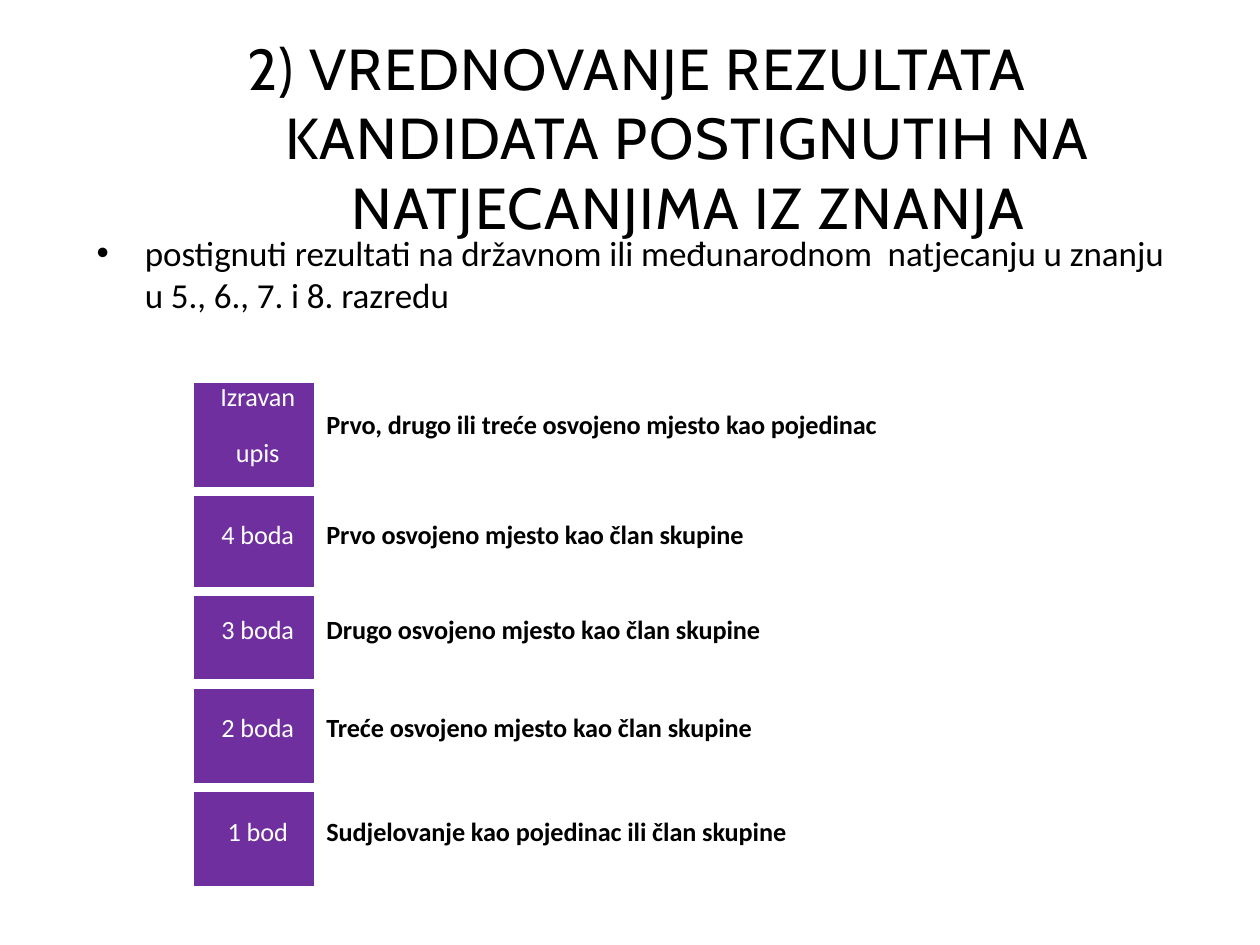
from lxml import etree
from pptx import Presentation
from pptx.dml.color import RGBColor
from pptx.enum.text import MSO_ANCHOR, PP_ALIGN
from pptx.oxml.ns import qn
from pptx.util import Cm, Pt

CENTER, LEFT = PP_ALIGN.CENTER, PP_ALIGN.LEFT
MIDDLE = MSO_ANCHOR.MIDDLE
COLORS = {"text": "000000", "points": "6F2F9F", "white": "FFFFFF"}

TITLE = "2) VREDNOVANJE REZULTATA KANDIDATA POSTIGNUTIH NA NATJECANJIMA IZ ZNANJA"
CRITERION = ("postignuti rezultati na državnom ili međunarodnom  "
             "natjecanju u znanju u 5., 6., 7. i 8. razredu")

# Points, achievement, row height and top margins of both cells (cm)
AWARDS = [
    ("Izravan\nupis", "Prvo, drugo ili treće osvojeno mjesto kao pojedinac", 2.29, 0.08, 0.64),
    ("4 boda", "Prvo osvojeno mjesto kao član skupine", 2.02, 0.56, 0.56),
    ("3 boda", "Drugo osvojeno mjesto kao član skupine", 1.86, 0.46, 0.46),
    ("2 boda", "Treće osvojeno mjesto kao član skupine", 2.08, 0.58, 0.58),
    ("1 bod", "Sudjelovanje kao pojedinac ili član skupine", 2.08, 0.58, 0.58),
]


def style_paragraph(paragraph, size, color="text", font="Calibri", bold=False,
                    align=LEFT, spacing=-5, margin=0, indent=0):
    """Format a paragraph; spacing is in hundredths of a point."""
    paragraph.alignment = align
    properties = paragraph._p.get_or_add_pPr()
    properties.set("marL", str(Cm(margin)))
    properties.set("indent", str(Cm(indent)))
    for run in paragraph.runs:
        run.font.size = Pt(size)
        run.font.name = font
        run.font.bold = bold
        run.font.color.rgb = RGBColor.from_string(COLORS[color])
        run._r.get_or_add_rPr().set("spc", str(spacing))


def add_text(slide, text, left, top, width, height):
    frame = slide.shapes.add_textbox(Cm(left), Cm(top), Cm(width), Cm(height)).text_frame
    frame.word_wrap = True
    frame.text = text
    return frame


def add_title(slide):
    frame = add_text(slide, TITLE, 2.34, 1.27, 21, 3.48)
    frame.vertical_anchor = MIDDLE
    frame.margin_left = frame.margin_right = frame.margin_top = 0
    frame.margin_bottom = Cm(0.5)
    style_paragraph(frame.paragraphs[0], 33, font="Cabin", align=CENTER,
                    spacing=80, margin=2.06, indent=-2.03)


def add_criterion(slide):
    paragraph = add_text(slide, CRITERION, 1.7, 4.55, 22.28, 2.57).paragraphs[0]
    style_paragraph(paragraph, 20, margin=0.97, indent=-0.97)
    properties = paragraph._p.get_or_add_pPr()
    etree.SubElement(properties, qn("a:buFont")).set("typeface", "Arial")
    etree.SubElement(properties, qn("a:buChar")).set("char", "•")


def add_borders(cell):
    properties = cell._tc.get_or_add_tcPr()
    for position, side in enumerate(("lnL", "lnR", "lnT", "lnB")):
        line = etree.Element(qn(f"a:{side}"), w=str(Pt(6)))
        fill = etree.SubElement(line, qn("a:solidFill"))
        etree.SubElement(fill, qn("a:srgbClr")).set("val", COLORS["white"])
        properties.insert(position, line)


def fill_cell(cell, text, top_margin, fill=None, **style):
    cell.text = text
    cell.margin_left = cell.margin_right = cell.margin_bottom = 0
    cell.margin_top = Cm(top_margin)
    if fill:
        cell.fill.solid()
        cell.fill.fore_color.rgb = RGBColor.from_string(COLORS[fill])
    else:
        cell.fill.background()
    add_borders(cell)
    for paragraph in cell.text_frame.paragraphs:
        style_paragraph(paragraph, 15, margin=0.15, **style)
    for paragraph in cell.text_frame.paragraphs[1:]:
        paragraph.space_before = Pt(13.6)


def add_awards(slide):
    height = sum(award[2] for award in AWARDS)
    table = slide.shapes.add_table(len(AWARDS), 2, Cm(3.81), Cm(7.62),
                                   Cm(18.21), Cm(height)).table
    table.first_row = table.horz_banding = False
    table.columns[0].width, table.columns[1].width = Cm(2.62), Cm(15.59)
    for row, (points, achievement, row_height, points_top, text_top) in zip(table.rows, AWARDS):
        row.height = Cm(row_height)
        fill_cell(row.cells[0], points, points_top, "points", color="white", align=CENTER)
        fill_cell(row.cells[1], achievement, text_top, bold=True)


def main():
    presentation = Presentation()
    presentation.slide_width, presentation.slide_height = Cm(25.4), Cm(19.05)
    slide = presentation.slides.add_slide(presentation.slide_layouts[6])
    add_title(slide)
    add_awards(slide)
    add_criterion(slide)
    presentation.save("out.pptx")


if __name__ == "__main__":
    main()
